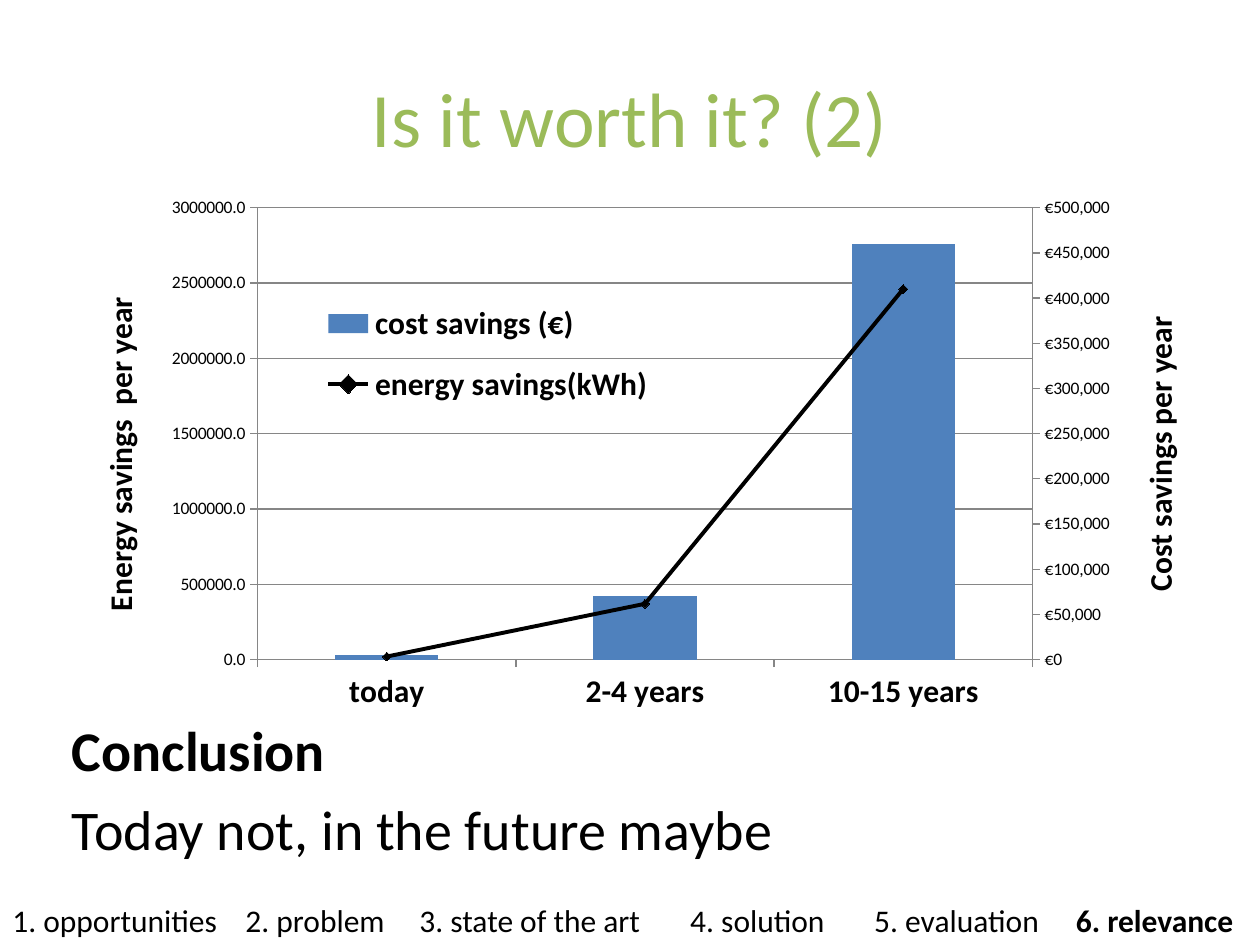
from copy import deepcopy
from dataclasses import dataclass

from lxml.etree import SubElement as Sub
from pptx import Presentation
from pptx.chart.axis import CategoryAxis as CatAx
from pptx.chart.axis import ValueAxis as ValAx
from pptx.chart.data import CategoryChartData as Data
from pptx.dml.color import RGBColor as RGB
from pptx.enum.chart import XL_CHART_TYPE as Type
from pptx.enum.chart import XL_LEGEND_POSITION as Side
from pptx.enum.chart import XL_MARKER_STYLE as Mark
from pptx.enum.chart import XL_TICK_LABEL_POSITION as Spot
from pptx.enum.chart import XL_TICK_MARK as Tick
from pptx.enum.text import MSO_ANCHOR as Anchor
from pptx.enum.text import PP_ALIGN as Align
from pptx.oxml import parse_xml
from pptx.oxml.ns import nsdecls, qn
from pptx.util import Inches, Pt


@dataclass
class Theme:
    font: str = "Calibri"
    green: RGB = RGB(0x9B, 0xBB, 0x59)
    blue: RGB = RGB(0x4F, 0x81, 0xBD)
    black: RGB = RGB(0, 0, 0)
    gray: RGB = RGB(0x86, 0x86, 0x86)
    title: Pt = Pt(44)
    body: Pt = Pt(32)
    label: Pt = Pt(18)
    tick: Pt = Pt(10)


theme = Theme()


def style(font, size, color=theme.black, bold=False):
    font.name, font.size, font.bold = theme.font, size, bold
    font.color.rgb = color


def tune(axis, title, code, top, step):
    frame = axis.axis_title.text_frame
    run = frame.paragraphs[0].add_run()
    run.text = title
    style(run.font, theme.label, bold=True)
    body = frame._txBody.bodyPr
    body.set("rot", "-5400000")
    body.set("vert", "horz")
    axis.tick_labels.number_format = code
    axis.tick_labels.number_format_is_linked = False
    style(axis.tick_labels.font, theme.tick)
    axis.major_tick_mark = Tick.OUTSIDE
    axis.format.line.color.rgb = theme.gray
    axis.minimum_scale, axis.maximum_scale = 0, top
    axis.major_unit = step


deck = Presentation()
deck.slide_width, deck.slide_height = Inches(10), Inches(7.5)
slide = deck.slides.add_slide(deck.slide_layouts[1])
head, body = slide.placeholders

head.left, head.top = Inches(0.5), Inches(0.3)
head.width, head.height = Inches(9), Inches(1.25)
head.text_frame.vertical_anchor = Anchor.MIDDLE
para = head.text_frame.paragraphs[0]
para.alignment = Align.CENTER
run = para.add_run()
run.text = "Is it worth it? (2)"
style(run.font, theme.title, theme.green)

foot = slide.shapes.add_textbox(Inches(0), Inches(7.1), Inches(10), Inches(0.4))
foot.text_frame.word_wrap = True
para = foot.text_frame.paragraphs[0]
tabs = Sub(para._p.get_or_add_pPr(), qn("a:tabLst"))
for stop in (1.85, 3.23, 5.38, 6.84, 8.44):
    Sub(tabs, qn("a:tab"), pos=str(Inches(stop)), algn="l")
steps = ("1. opportunities", "2. problem", "3. state of the art",
         "4. solution", "5. evaluation", "6. relevance")
for step in steps:
    last = step == steps[-1]
    run = para.add_run()
    run.text = step if last else step + "\t"
    style(run.font, theme.label, bold=last)

data = Data()
data.categories = ["today", "2-4 years", "10-15 years"]
data.add_series("cost savings (€)", (5000, 70000, 460000))
data.add_series("energy savings(kWh)", (20000, 370000, 2460000))
chart = slide.shapes.add_chart(
    Type.COLUMN_CLUSTERED, Inches(0.62), Inches(1.48),
    Inches(8.91), Inches(4.22), data).chart
chart.has_title = False
style(chart.font, theme.tick)

bars = chart.plots[0]
bars.gap_width = 150
bars.vary_by_categories = False
fill = bars.series[0].format.fill
fill.solid()
fill.fore_color.rgb = theme.blue

area = chart._chartSpace.chart.plotArea
group = area.find(qn("c:barChart"))
line = parse_xml(
    f'<c:lineChart {nsdecls("c")}><c:grouping val="standard"/>'
    '<c:varyColors val="0"/><c:marker val="1"/>'
    '<c:axId val="501"/><c:axId val="502"/></c:lineChart>')
ser = group.findall(qn("c:ser"))[1]
flip = ser.find(qn("c:invertIfNegative"))
if flip is not None:
    ser.remove(flip)
line.insert(2, ser)
group.addnext(line)

base, rise = area.find(qn("c:catAx")), area.find(qn("c:valAx"))
floor, wall = deepcopy(base), deepcopy(rise)
for twin, own, other in ((floor, "501", "502"), (wall, "502", "501")):
    twin.find(qn("c:axId")).set("val", own)
    twin.find(qn("c:crossAx")).set("val", other)
    base.addprevious(twin)
rise.addnext(base)

energy = ValAx(wall)
tune(energy, "Energy savings  per year", "0.0", 3000000, 500000)
energy.has_major_gridlines = True
energy.major_gridlines.format.line.color.rgb = theme.gray
years = CatAx(floor)
style(years.tick_labels.font, theme.label, bold=True)
years.major_tick_mark = Tick.OUTSIDE
years.format.line.color.rgb = theme.gray

cost = ValAx(rise)
tune(cost, "Cost savings per year", "[$€-816]#,##0", 500000, 50000)
cost.has_major_gridlines = False
cost.tick_label_position = Spot.HIGH
rise.find(qn("c:axPos")).set("val", "r")
rise.find(qn("c:crosses")).set("val", "max")
CatAx(base).visible = False

trend = chart.plots[1].series[0]
trend.smooth = False
trend.format.line.color.rgb = theme.black
trend.format.line.width = Pt(2.25)
trend.marker.style, trend.marker.size = Mark.DIAMOND, 5
trend.marker.format.fill.solid()
trend.marker.format.fill.fore_color.rgb = theme.black
trend.marker.format.line.color.rgb = theme.black

chart.has_legend = True
key = chart.legend
key.position = Side.LEFT
key.include_in_layout = False
style(key.font, theme.label, bold=True)
key._element.find(qn("c:overlay")).set("val", "1")

for owner, inner, box in ((area, True, (0.16, 0.04, 0.69, 0.85)),
                          (key._element, False, (0.2, 0.18, 0.33, 0.27))):
    old = owner.find(qn("c:layout"))
    if old is not None:
        owner.remove(old)
    lay = parse_xml(f'<c:layout {nsdecls("c")}><c:manualLayout/></c:layout>')
    if inner:
        Sub(lay[0], qn("c:layoutTarget"), val="inner")
    for name in ("xMode", "yMode"):
        Sub(lay[0], qn("c:" + name), val="edge")
    for name, part in zip("xywh", box):
        Sub(lay[0], qn("c:" + name), val=str(part))
    owner.insert(0 if inner else 1, lay)

body.left, body.top = Inches(0.47), Inches(5.63)
body.width, body.height = Inches(9), Inches(1.56)
frame = body.text_frame
for para, text, bold in (
        (frame.paragraphs[0], "Conclusion", True),
        (frame.add_paragraph(), "Today not, in the future maybe", False)):
    props = para._p.get_or_add_pPr()
    props.set("marL", str(Inches(0.38)))
    props.set("indent", str(Inches(-0.38)))
    para.space_before = Pt(6.4)
    Sub(props, qn("a:buNone"))
    run = para.add_run()
    run.text = text
    style(run.font, theme.body, bold=bold)

deck.save("out.pptx")
